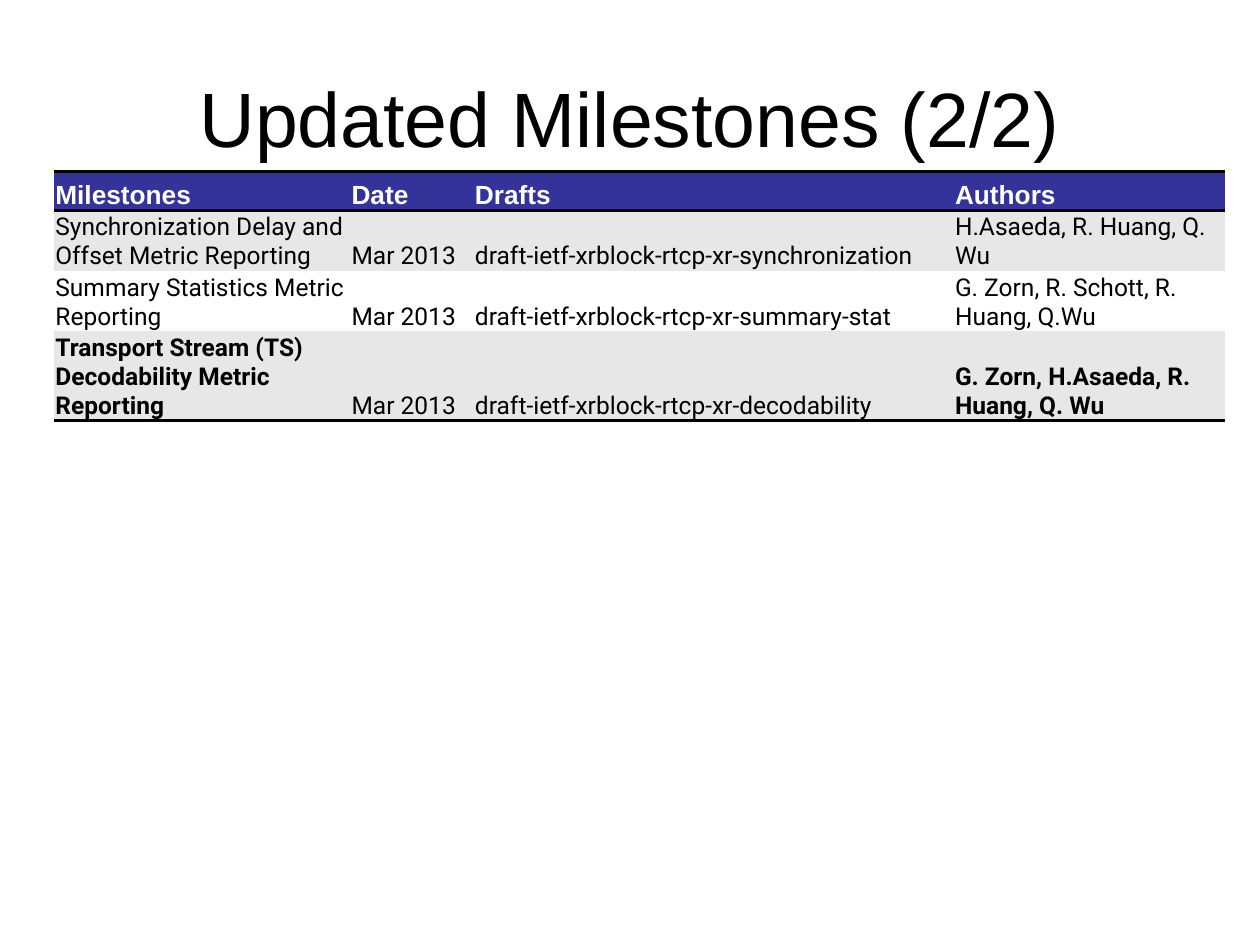
import pptx
import pptx.util
import pptx.dml.color
import pptx.enum.text
import lxml.etree

Inches = pptx.util.Inches
COLOURS = {"black": "000000", "white": "FFFFFF", "header": "333399", "band": "E7E7E7"}
DRAWING = "{http://schemas.openxmlformats.org/drawingml/2006/main}"


def add_span(para, text, font, size, colour, bold=False):
    span = para.add_run()
    span.text = text
    span.font.name = font
    span.font.size = pptx.util.Pt(size)
    span.font.bold = bold
    span.font.color.rgb = pptx.dml.color.RGBColor.from_string(COLOURS[colour])


def add_border(cell, side, visible):
    properties = cell._tc.get_or_add_tcPr()
    line = lxml.etree.SubElement(properties, DRAWING + "ln" + side)
    if visible:
        line.set("w", str(pptx.util.Pt(2)))
        fill = lxml.etree.SubElement(line, DRAWING + "solidFill")
        lxml.etree.SubElement(fill, DRAWING + "srgbClr", val=COLOURS["black"])
    else:
        lxml.etree.SubElement(line, DRAWING + "noFill")


deck = pptx.Presentation()
deck.slide_width = Inches(10)
deck.slide_height = Inches(7.5)
page = deck.slides.add_slide(deck.slide_layouts[6])

title_box = page.shapes.add_textbox(Inches(0.5), Inches(0.3), Inches(9), Inches(1.25))
title_box.text_frame.word_wrap = True
title_box.text_frame.vertical_anchor = pptx.enum.text.MSO_ANCHOR.MIDDLE
title_para = title_box.text_frame.paragraphs[0]
title_para.alignment = pptx.enum.text.PP_ALIGN.CENTER
add_span(title_para, "Updated Milestones (2/2)", "Arial", 44, "black")

milestones = [
    ["Milestones", "Date", "Drafts", "Authors"],
    ["Synchronization Delay and Offset Metric Reporting", "Mar 2013",
     "draft-ietf-xrblock-rtcp-xr-synchronization", "H.Asaeda, R. Huang, Q. Wu"],
    ["Summary Statistics Metric Reporting", "Mar 2013",
     "draft-ietf-xrblock-rtcp-xr-summary-stat", "G. Zorn, R. Schott, R. Huang, Q.Wu"],
    ["Transport Stream (TS) Decodability Metric Reporting", "Mar 2013",
     "draft-ietf-xrblock-rtcp-xr-decodability", "G. Zorn, H.Asaeda, R. Huang, Q. Wu"],
]
bold_cells = {(3, 0), (3, 3)}
column_widths = [2.35, 0.98, 3.81, 2.15]
row_heights = [0.31, 0.48, 0.48, 0.7]
row_fills = ["header", "band", "white", "band"]
ruled_edges = {0, 1, len(milestones)}

table = page.shapes.add_table(
    len(row_heights), len(column_widths), Inches(0.43), Inches(1.36),
    Inches(sum(column_widths)), Inches(sum(row_heights))).table
for column, width in zip(table.columns, column_widths):
    column.width = Inches(width)

for row, texts in enumerate(milestones):
    table.rows[row].height = Inches(row_heights[row])
    for column, text in enumerate(texts):
        cell = table.cell(row, column)
        cell.margin_left = cell.margin_right = cell.margin_top = Inches(0.01)
        cell.margin_bottom = 0
        cell.vertical_anchor = pptx.enum.text.MSO_ANCHOR.BOTTOM
        add_border(cell, "L", False)
        add_border(cell, "R", False)
        add_border(cell, "T", row in ruled_edges)
        add_border(cell, "B", row + 1 in ruled_edges)
        cell.fill.solid()
        cell.fill.fore_color.rgb = pptx.dml.color.RGBColor.from_string(COLOURS[row_fills[row]])
        para = cell.text_frame.paragraphs[0]
        if row == 0:
            add_span(para, text, "Arial", 15, "white", True)
        else:
            add_span(para, text, "Roboto", 14, "black", (row, column) in bold_cells)

deck.save("out.pptx")
